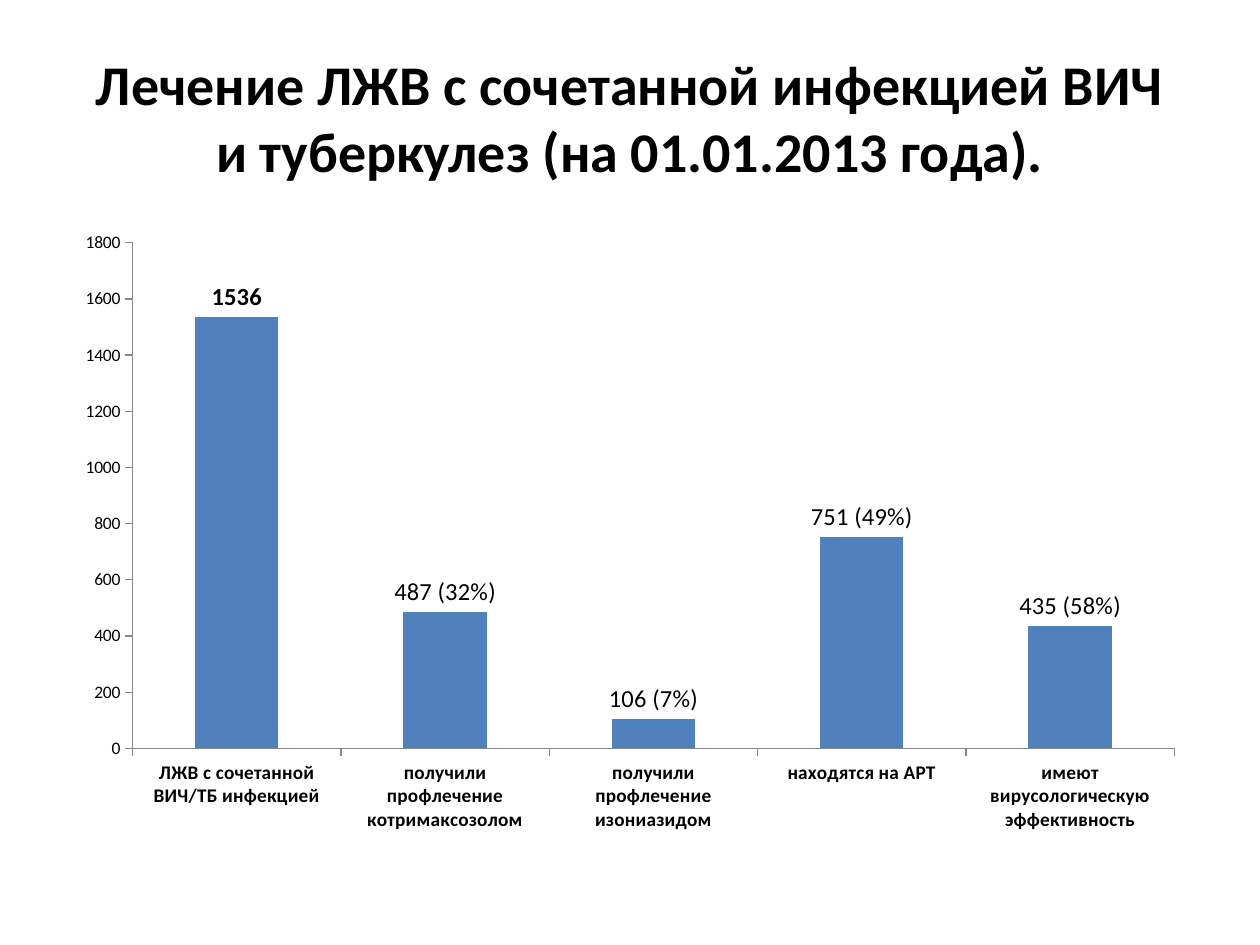
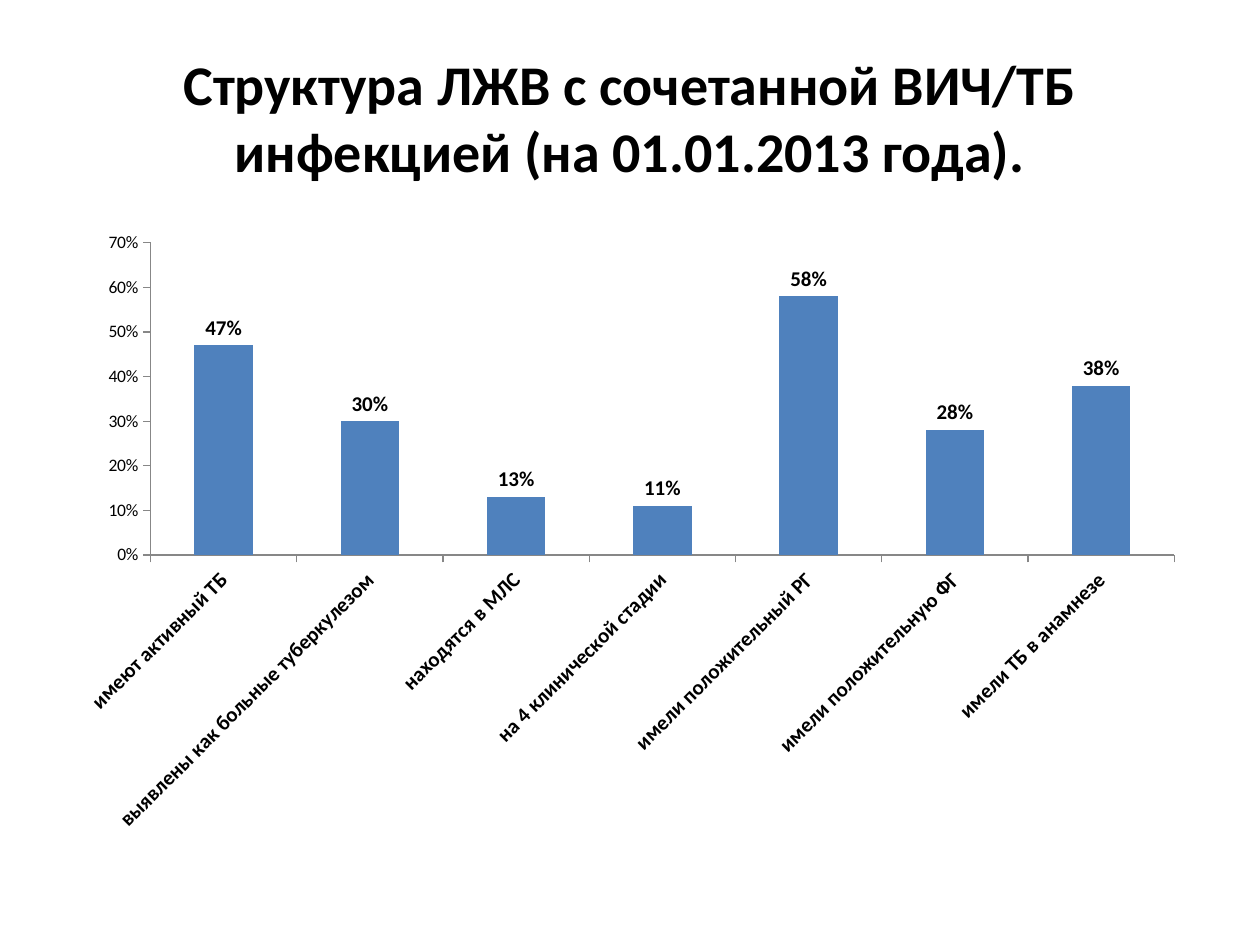
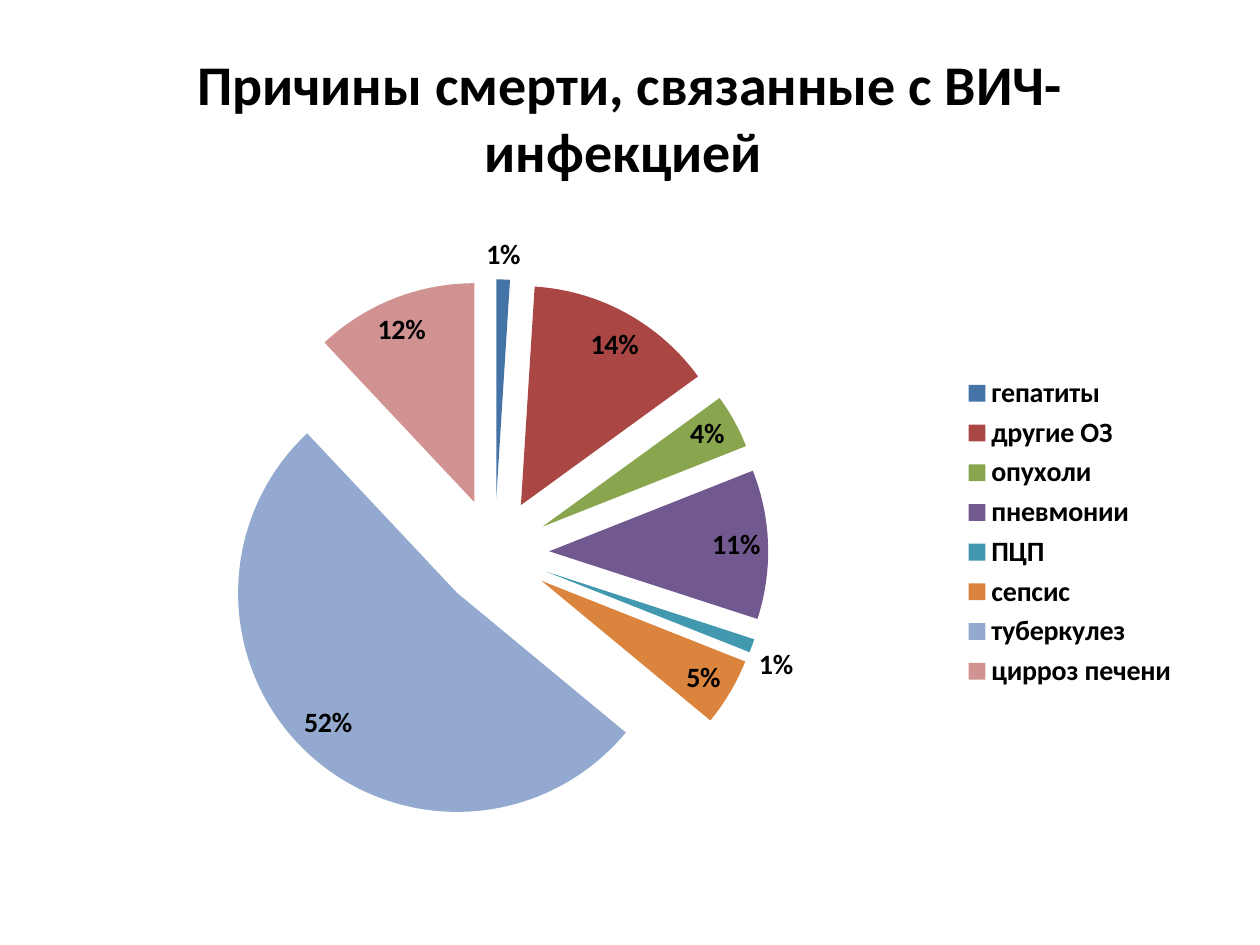
import pptx
import pptx.chart.data
import pptx.dml.color
import pptx.enum.chart
import pptx.enum.text
import pptx.oxml
import pptx.oxml.ns
import pptx.util

Inches = pptx.util.Inches
Pt = pptx.util.Pt
FONT = "Calibri"
COLORS = {"text": "000000", "bar": "4F81BD", "axis": "878787"}
CAUSES = {
    "гепатиты": (0.01, "4572A7"),
    "другие ОЗ": (0.14, "AA4643"),
    "опухоли": (0.04, "89A54E"),
    "пневмонии": (0.11, "71588F"),
    "ПЦП": (0.01, "4198AF"),
    "сепсис": (0.05, "DB843D"),
    "туберкулез": (0.52, "93A9CF"),
    "цирроз печени ": (0.12, "D19392"),
}
TREATMENT = {
    "ЛЖВ с сочетанной ВИЧ/ТБ инфекцией": 1536,
    "получили профлечение котримаксозолом": 487,
    "получили профлечение изониазидом": 106,
    "находятся на АРТ": 751,
    "имеют вирусологическую эффективность": 435,
}
SHARES = {1: "487 (32%)", 2: "106 (7%)", 3: "751 (49%)", 4: "435 (58%)"}
STRUCTURE = {
    "имеют активный ТБ": 0.47,
    "выявлены как больные туберкулезом": 0.3,
    "находятся в МЛС": 0.13,
    "на 4 клинической стадии": 0.11,
    "имели положительный РГ": 0.58,
    "имели положительную ФГ": 0.28,
    "имели ТБ в анамнезе": 0.38,
}


def rgb(color):
    """Return the RGB value of a hex string."""
    return pptx.dml.color.RGBColor.from_string(color)


def style_font(font, size, bold=False):
    """Apply the common typeface and text colour."""
    font.name = FONT
    font.size = Pt(size)
    font.bold = bold
    font.color.rgb = rgb(COLORS["text"])


def paint(fill, color):
    """Fill with a solid colour."""
    fill.solid()
    fill.fore_color.rgb = rgb(color)


def add_slide(prs, title):
    """Add a blank slide with a centred title."""
    s = prs.slides.add_slide(prs.slide_layouts[6])
    sp = s.shapes.add_textbox(Inches(0.5), Inches(0.3), Inches(9), Inches(1.25))
    tf = sp.text_frame
    tf.word_wrap = True
    tf.vertical_anchor = pptx.enum.text.MSO_ANCHOR.MIDDLE
    p = tf.paragraphs[0]
    p.text = title
    p.alignment = pptx.enum.text.PP_ALIGN.CENTER
    style_font(p.font, 32, True)
    return s


def add_chart(s, kind, values, number_format, label_size, position):
    """Add a labelled one-series chart below the title."""
    data = pptx.chart.data.CategoryChartData(number_format=number_format)
    data.categories = list(values)
    data.add_series("Series 1", list(values.values()))
    chart = s.shapes.add_chart(
        kind, Inches(0.5), Inches(1.75), Inches(9), Inches(4.95), data
    ).chart
    chart.has_title = False
    chart.has_legend = False
    style_font(chart.font, 10)
    labels = chart.plots[0].series[0].data_labels
    labels.show_value = True
    labels.number_format = number_format
    labels.number_format_is_linked = False
    labels.position = position
    style_font(labels.font, label_size, True)
    return chart


def style_axis(axis, size, bold=False):
    """Give an axis a grey line, outer ticks and no gridlines."""
    axis.has_major_gridlines = False
    axis.major_tick_mark = pptx.enum.chart.XL_TICK_MARK.OUTSIDE
    axis.format.line.color.rgb = rgb(COLORS["axis"])
    axis.format.line.width = Pt(0.75)
    style_font(axis.tick_labels.font, size, bold)


def add_columns(s, values, number_format, label_size, category_size, top, step, angle=0):
    """Add a column chart with category labels turned by an angle."""
    position = pptx.enum.chart.XL_LABEL_POSITION.OUTSIDE_END
    kind = pptx.enum.chart.XL_CHART_TYPE.COLUMN_CLUSTERED
    chart = add_chart(s, kind, values, number_format, label_size, position)
    plot = chart.plots[0]
    plot.gap_width = 150
    plot.vary_by_categories = False
    paint(plot.series[0].format.fill, COLORS["bar"])
    style_axis(chart.category_axis, category_size, True)
    body = chart.category_axis._element.find(".//" + pptx.oxml.ns.qn("a:bodyPr"))
    body.set("rot", str(angle * 60000))
    axis = chart.value_axis
    style_axis(axis, 10)
    axis.minimum_scale = 0
    axis.maximum_scale = top
    axis.major_unit = step
    axis.tick_labels.number_format = number_format
    axis.tick_labels.number_format_is_linked = False
    return chart


def relabel(chart, texts, size):
    """Replace the labels of chosen points with text."""
    for index, text in texts.items():
        label = chart.plots[0].series[0].points[index].data_label
        p = label.text_frame.paragraphs[0]
        p.text = text
        style_font(p.font, size)
        label.position = pptx.enum.chart.XL_LABEL_POSITION.OUTSIDE_END


def add_exploded_pie(s, slices, explosion):
    """Add a pie with separated slices and a legend on the right."""
    values = {name: value for name, (value, color) in slices.items()}
    kind = pptx.enum.chart.XL_CHART_TYPE.PIE
    position = pptx.enum.chart.XL_LABEL_POSITION.BEST_FIT
    chart = add_chart(s, kind, values, "0%", 16, position)
    chart.plots[0].vary_by_categories = True
    series = chart.plots[0].series[0]
    for index, (value, color) in enumerate(slices.values()):
        paint(series.points[index].format.fill, color)
    node = pptx.oxml.parse_xml(
        f'<c:explosion {pptx.oxml.ns.nsdecls("c")} val="{explosion}"/>'
    )
    series._element.find(pptx.oxml.ns.qn("c:tx")).addnext(node)
    chart.has_legend = True
    chart.legend.position = pptx.enum.chart.XL_LEGEND_POSITION.RIGHT
    chart.legend.include_in_layout = False
    style_font(chart.legend.font, 16, True)


def main():
    """Build and save the presentation."""
    prs = pptx.Presentation()
    prs.slide_width = Inches(10)
    prs.slide_height = Inches(7.5)

    s = add_slide(
        prs, "Лечение ЛЖВ с сочетанной инфекцией ВИЧ и туберкулез (на 01.01.2013 года)."
    )
    chart = add_columns(s, TREATMENT, "General", 14, 11, 1800, 200)
    relabel(chart, SHARES, 14)

    s = add_slide(prs, "Структура ЛЖВ с сочетанной ВИЧ/ТБ инфекцией (на 01.01.2013 года).")
    add_columns(s, STRUCTURE, "0%", 12, 12, 0.7, 0.1, -45)

    s = add_slide(prs, "Причины смерти, связанные с ВИЧ-инфекцией ")
    add_exploded_pie(s, CAUSES, 25)

    prs.save("out.pptx")


if __name__ == "__main__":
    main()
